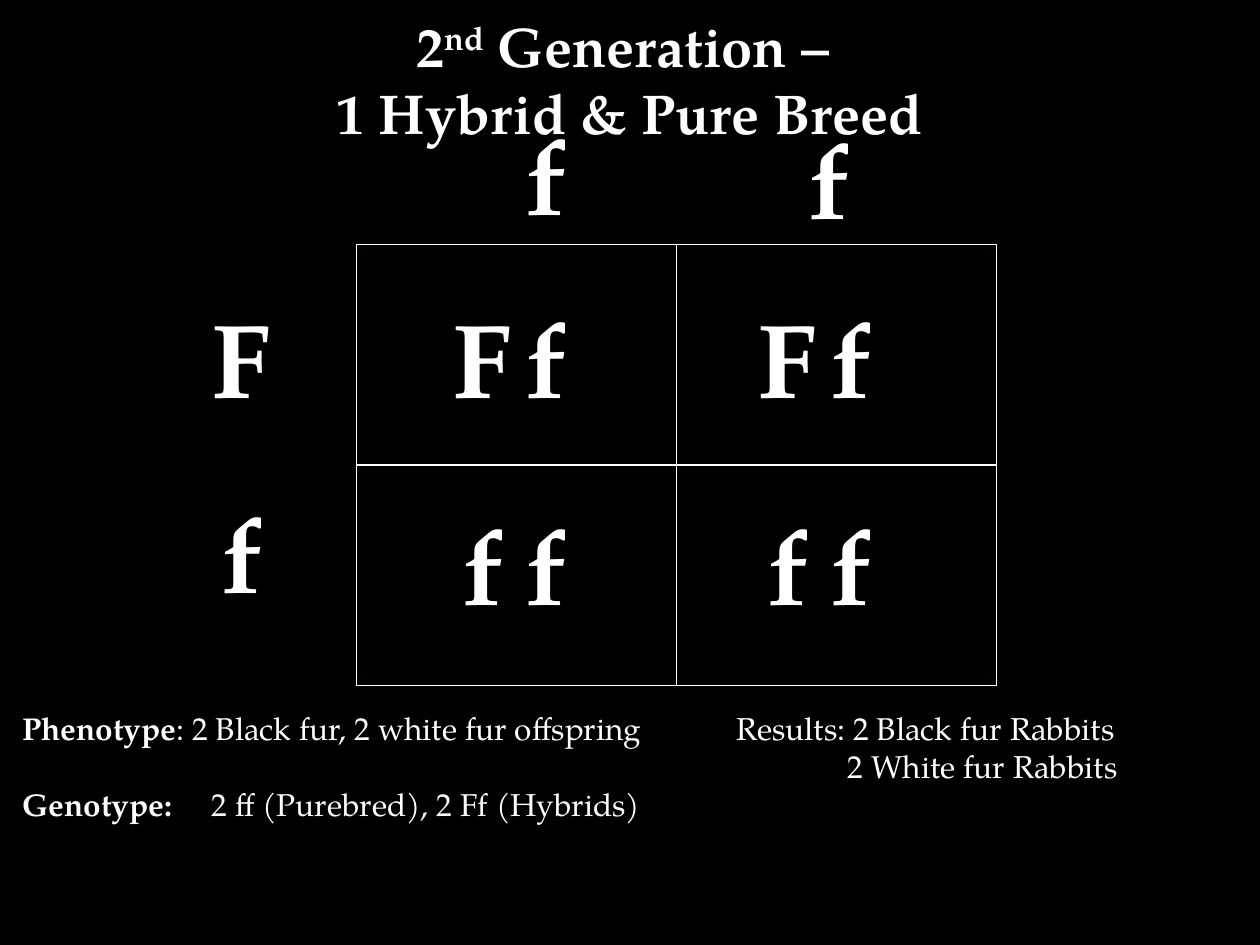
from lxml.etree import SubElement
from pptx import Presentation
from pptx.dml.color import RGBColor
from pptx.enum.shapes import MSO_CONNECTOR, MSO_SHAPE
from pptx.enum.text import MSO_ANCHOR, MSO_AUTO_SIZE, PP_ALIGN
from pptx.oxml.ns import qn
from pptx.util import Inches, Pt

BLACK = RGBColor(0x00, 0x00, 0x00)
WHITE = RGBColor(0xFF, 0xFF, 0xFF)
SHADOW = RGBColor(0x5F, 0x5F, 0x5F)
FONT = "TeX Gyre Pagella"
LETTER_WIDTH, LETTER_HEIGHT = 1, 1.11


def add_text(slide, box, paragraphs, size=18, align=PP_ALIGN.LEFT,
             anchor=MSO_ANCHOR.TOP, grow=True, gap=0):
    """Each paragraph is a list of (text, bold, superscript percent) runs."""
    shape = slide.shapes.add_textbox(*map(Inches, box))
    frame = shape.text_frame
    frame.word_wrap = True
    frame.vertical_anchor = anchor
    frame.auto_size = MSO_AUTO_SIZE.SHAPE_TO_FIT_TEXT if grow else MSO_AUTO_SIZE.NONE
    for index, runs in enumerate(paragraphs):
        paragraph = frame.paragraphs[0] if index == 0 else frame.add_paragraph()
        paragraph.alignment = align
        if index and gap:
            paragraph.space_before = Pt(gap)
        for text, bold, raised in runs:
            run = paragraph.add_run()
            run.text = text
            run.font.name, run.font.size, run.font.bold = FONT, Pt(size), bold
            run.font.color.rgb = WHITE
            if raised:
                run.font._element.set("baseline", str(raised * 1000))
    return frame


def add_letter(slide, letter, left, top):
    add_text(slide, (left, top, LETTER_WIDTH, LETTER_HEIGHT),
             [[(letter, True, 0)]], size=60, align=PP_ALIGN.CENTER)


def add_divider(slide, square, begin_side, end_side):
    line = slide.shapes.add_connector(MSO_CONNECTOR.STRAIGHT, 0, 0, 0, 0)
    line.begin_connect(square, begin_side)
    line.end_connect(square, end_side)
    line.line.color.rgb = WHITE
    line.line.width = Pt(0.75)
    SubElement(line._element.spPr, qn("a:effectLst"))


def add_glow(shape):
    """Soft, centred shadow around the shape."""
    shape.shadow.inherit = False
    effects = shape._element.spPr.find(qn("a:effectLst"))
    shadow = SubElement(effects, qn("a:outerShdw"), blurRad=str(Pt(9)), dist="0", dir="0")
    color = SubElement(shadow, qn("a:srgbClr"), val=str(SHADOW))
    SubElement(color, qn("a:alpha"), val="50000")


def add_punnett_square(slide, box):
    left, top, width, height = box
    square = slide.shapes.add_shape(MSO_SHAPE.RECTANGLE, *map(Inches, box))
    square.fill.background()
    square.line.color.rgb = WHITE
    square.line.width = Pt(0.75)
    add_glow(square)
    add_divider(slide, square, 0, 2)
    add_divider(slide, square, 1, 3)

    # Parent alleles: rows on the left, columns above
    for letter, offset in (("F", 0.34), ("f", 1.89)):
        add_letter(slide, letter, left - 1.41, top + offset)
    for across, up in ((1, 1.11), (3.25, 1.08)):
        add_letter(slide, "f", left + across, top - up)

    # Offspring: one pair of letters in each cell
    for row, genotype in enumerate(("Ff", "ff")):
        for column in range(2):
            for position, letter in enumerate(genotype):
                add_letter(slide, letter,
                           left + 0.5 + 2.42 * column + 0.5 * position,
                           top + 0.34 + 1.64 * row)


def add_title(slide, box):
    add_text(slide, box,
             [[("2", True, 0), ("nd", True, 30), (" Generation – ", True, 0)],
              [("1 Hybrid & Pure Breed", True, 0)]],
             size=32, align=PP_ALIGN.CENTER, anchor=MSO_ANCHOR.MIDDLE, grow=False)


def add_types(slide, box):
    frame = add_text(slide, box,
                     [[("Phenotype", True, 0),
                       (": 2 Black fur, 2 white fur offspring", False, 0)],
                      [("Genotype:", True, 0),
                       ("\t2 ff (Purebred), 2 Ff (Hybrids)", False, 0)]], gap=21.6)
    properties = frame.paragraphs[1]._p.get_or_add_pPr()
    tabs = SubElement(properties, qn("a:tabLst"))
    SubElement(tabs, qn("a:tab"), pos=str(Inches(1.5)), algn="l")


def add_results(slide, box):
    frame = add_text(slide, box, [[("Results: 2 Black fur Rabbits", False, 0)],
                                  [("2 White fur Rabbits", False, 0)]])
    frame.paragraphs[1]._p.get_or_add_pPr().set("marL", str(Inches(0.88)))


def main():
    presentation = Presentation()
    presentation.slide_width, presentation.slide_height = Inches(10), Inches(7.5)
    slide = presentation.slides.add_slide(presentation.slide_layouts[6])
    slide.background.fill.solid()
    slide.background.fill.fore_color.rgb = BLACK

    add_punnett_square(slide, (2.83, 1.94, 5.08, 3.5))
    add_title(slide, (0.5, 0, 9, 1.25))
    add_types(slide, (0.08, 5.58, 5.79, 1.01))
    add_results(slide, (5.75, 5.58, 3.75, 0.71))
    presentation.save("out.pptx")


if __name__ == "__main__":
    main()
